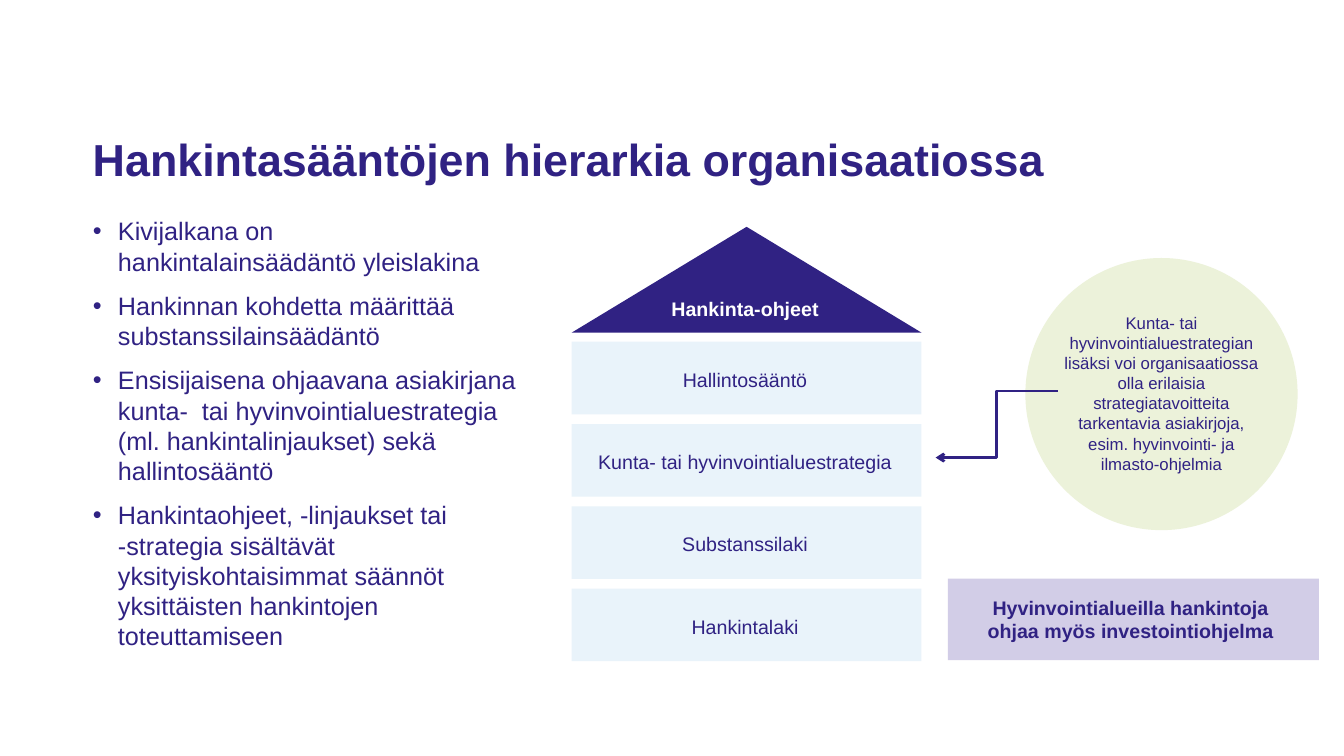
from pptx import Presentation
from pptx.dml.color import RGBColor
from pptx.enum.shapes import MSO_CONNECTOR, MSO_SHAPE
from pptx.enum.text import MSO_ANCHOR, PP_ALIGN
from pptx.oxml.ns import qn
from pptx.util import Inches, Pt
from lxml import etree

RECTANGLE, TRIANGLE, OVAL = MSO_SHAPE.RECTANGLE, MSO_SHAPE.ISOSCELES_TRIANGLE, MSO_SHAPE.OVAL
ELBOW = MSO_CONNECTOR.ELBOW
TOP, MIDDLE, BOTTOM = MSO_ANCHOR.TOP, MSO_ANCHOR.MIDDLE, MSO_ANCHOR.BOTTOM
LEFT, CENTER = PP_ALIGN.LEFT, PP_ALIGN.CENTER
NAVY, PALE_BLUE, LILAC, PALE_GREEN, WHITE = "302283", "E9F3FA", "D2CDE7", "ECF2DA", "FFFFFF"

presentation = Presentation()
presentation.slide_width = Inches(13.33)
presentation.slide_height = Inches(7.5)
slide = presentation.slides.add_slide(presentation.slide_layouts[6])


def add_block(kind, left, top, width, height, color):
    shape = slide.shapes.add_shape(kind, Inches(left), Inches(top), Inches(width), Inches(height))
    shape.shadow.inherit = False
    shape.fill.solid()
    shape.fill.fore_color.rgb = RGBColor.from_string(color)
    shape.line.fill.background()


def add_text(text, left, top, width, height, size=14, color=NAVY, bold=False, align=CENTER,
             anchor=TOP, spacing=1.0, inset=(0, 0), bullet=False):
    box = slide.shapes.add_textbox(Inches(left), Inches(top), Inches(width), Inches(height))
    frame = box.text_frame
    frame.word_wrap = True
    frame.vertical_anchor = anchor
    frame.margin_left = frame.margin_right = Inches(inset[0])
    frame.margin_top = frame.margin_bottom = Inches(inset[1])
    frame.text = text
    for index, paragraph in enumerate(frame.paragraphs):
        paragraph.alignment = align
        paragraph.line_spacing = spacing
        if index:
            paragraph.space_before = Pt(10)
        if bullet:
            properties = paragraph._p.get_or_add_pPr()
            properties.set("marL", str(Inches(0.25)))
            properties.set("indent", str(-Inches(0.25)))
            etree.SubElement(properties, qn("a:buFont")).set("typeface", "Arial")
            etree.SubElement(properties, qn("a:buChar")).set("char", "•")
        paragraph.font.name = "Arial"
        paragraph.font.size = Pt(size)
        paragraph.font.bold = bold
        paragraph.font.color.rgb = RGBColor.from_string(color)


add_block(RECTANGLE, 9.4, 5.74, 3.68, 0.81, LILAC)
add_text("Hankintasääntöjen hierarkia organisaatiossa", 0.92, 0.4, 11.5, 1.45,
         size=32, bold=True, align=LEFT, anchor=BOTTOM, spacing=0.9)

points = [
    "Kivijalkana on hankintalainsäädäntö yleislakina",
    "Hankinnan kohdetta määrittää substanssilainsäädäntö",
    "Ensisijaisena ohjaavana asiakirjana kunta-  tai hyvinvointialuestrategia "
    "(ml. hankintalinjaukset) sekä hallintosääntö",
    "Hankintaohjeet, -linjaukset tai -strategia sisältävät yksityiskohtaisimmat säännöt "
    "yksittäisten hankintojen toteuttamiseen",
]
add_text("\n".join(points), 0.92, 2.14, 4.21, 4.73, size=18, align=LEFT, bullet=True)

floors = ["Hallintosääntö", "Kunta- tai hyvinvointialuestrategia", "Substanssilaki", "Hankintalaki"]
floor_pitch = (5.84 - 3.39) / 3
for index, floor in enumerate(floors):
    floor_top = 3.39 + index * floor_pitch
    add_block(RECTANGLE, 5.67, floor_top, 3.47, 0.72, PALE_BLUE)
    add_text(floor, 5.82, floor_top, 3.14, 0.72, anchor=MIDDLE, spacing=1.1)

add_block(TRIANGLE, 5.67, 2.25, 3.47, 1.05, NAVY)
add_text("Hankinta-ohjeet", 5.82, 2.81, 3.14, 0.49, color=WHITE, bold=True,
         anchor=MIDDLE, spacing=1.1)

add_block(OVAL, 10.17, 2.56, 2.7, 2.7, PALE_GREEN)
add_text("Kunta- tai hyvinvointialuestrategian lisäksi voi organisaatiossa olla erilaisia "
         "strategiatavoitteita tarkentavia asiakirjoja, esim. hyvinvointi- ja ilmasto-ohjelmia",
         10.44, 3.05, 2.16, 1.72, size=12, inset=(0.1, 0.05))
add_text("Hyvinvointialueilla hankintoja ohjaa myös investointiohjelma",
         9.66, 5.86, 3.11, 0.57, bold=True, inset=(0.1, 0.05))

arrow = slide.shapes.add_connector(ELBOW, Inches(10.49), Inches(3.88), Inches(9.28), Inches(4.54))
arrow.line.color.rgb = RGBColor.from_string(NAVY)
arrow.line.width = Pt(2)
etree.SubElement(arrow.line._get_or_add_ln(), qn("a:tailEnd")).set("type", "arrow")
etree.SubElement(arrow._element.spPr, qn("a:effectLst"))

presentation.save("out.pptx")
